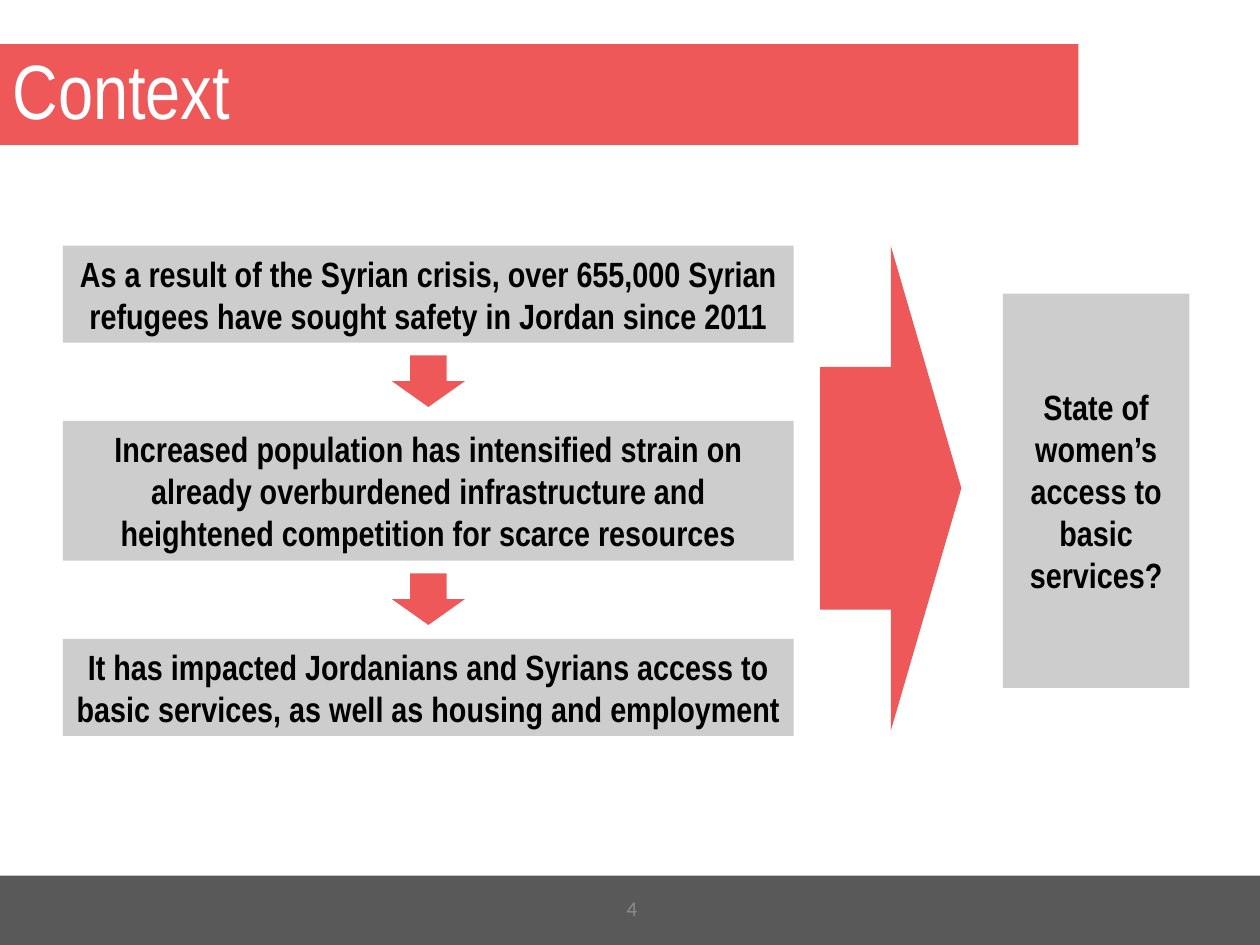
from dataclasses import dataclass

from pptx import Presentation
from pptx.dml.color import RGBColor
from pptx.enum.shapes import MSO_SHAPE as Shape
from pptx.enum.text import MSO_ANCHOR as Anchor, PP_ALIGN as Align
from pptx.util import Emu, Pt

EMU_PER_PX = 9144  # 100 px to the inch
COLORS = {
    "coral": "EE5859",
    "panel": "CDCDCD",
    "footer": "595959",
    "number": "8C8C8C",
    "white": "FFFFFF",
    "black": "000000",
}
NARROW = "Arial Narrow"


@dataclass(frozen=True)
class Box:
    left: int
    top: int
    width: int
    height: int

    def emu(self) -> tuple[Emu, ...]:
        return tuple(Emu(px * EMU_PER_PX)
                     for px in (self.left, self.top, self.width, self.height))


@dataclass(frozen=True)
class Statement:
    box: Box
    text: str


STATEMENTS = [
    Statement(Box(50, 195, 580, 77),
              "As a result of the Syrian crisis, over 655,000 Syrian "
              "refugees have sought safety in Jordan since 2011"),
    Statement(Box(50, 334, 580, 111),
              "Increased population has intensified strain on already overburdened "
              "infrastructure and heightened competition for scarce resources"),
    Statement(Box(50, 507, 580, 77),
              "It has impacted Jordanians and Syrians access to basic services, "
              "as well as housing and employment"),
]
QUESTION = Statement(Box(796, 233, 148, 313),
                     "State of women’s access to basic services?")
STEP_ARROW_WIDTH, STEP_ARROW_HEIGHT = 58, 41


def color(name: str) -> RGBColor:
    return RGBColor.from_string(COLORS[name])


def fill_shape(shape, fill: str) -> None:
    shape.fill.solid()
    shape.fill.fore_color.rgb = color(fill)


def add_flat(slide, kind: Shape, box: Box, fill: str):
    """Add a preset shape with no outline and no shadow."""
    shape = slide.shapes.add_shape(kind, *box.emu())
    fill_shape(shape, fill)
    shape.line.fill.background()
    shape.shadow.inherit = False
    return shape


def write(shape, text: str, font_name: str, size: int, ink: str,
          align: Align = Align.CENTER, bold: bool = False) -> None:
    frame = shape.text_frame
    frame.text = text
    frame.word_wrap = True
    frame.vertical_anchor = Anchor.MIDDLE
    paragraph = frame.paragraphs[0]
    paragraph.alignment = align
    font = paragraph.font
    font.name, font.size, font.bold = font_name, Pt(size), bold
    font.color.rgb = color(ink)


def add_statement(slide, statement: Statement) -> None:
    panel = add_flat(slide, Shape.RECTANGLE, statement.box, "panel")
    write(panel, statement.text, NARROW, 20, "black", bold=True)


def add_step_arrow(slide, above: Box, below: Box) -> None:
    """Centre a down arrow in the gap between two panels."""
    gap_top = above.top + above.height
    left = above.left + (above.width - STEP_ARROW_WIDTH) // 2
    top = (gap_top + below.top - STEP_ARROW_HEIGHT) // 2
    add_flat(slide, Shape.DOWN_ARROW,
             Box(left, top, STEP_ARROW_WIDTH, STEP_ARROW_HEIGHT), "coral")


def add_title(slide, box: Box, text: str) -> None:
    title = slide.shapes.title
    title.left, title.top, title.width, title.height = box.emu()
    fill_shape(title, "coral")
    write(title, text, NARROW, 44, "white", align=Align.LEFT)
    title.text_frame.paragraphs[0].line_spacing = 0.9


def main() -> None:
    deck = Presentation()
    deck.slide_width = Emu(1000 * EMU_PER_PX)
    deck.slide_height = Emu(750 * EMU_PER_PX)
    slide = deck.slides.add_slide(deck.slide_layouts[5])

    add_title(slide, Box(0, 35, 856, 80), "Context")
    add_flat(slide, Shape.RECTANGLE, Box(0, 695, 1000, 55), "footer")

    for statement in STATEMENTS:
        add_statement(slide, statement)
    for above, below in zip(STATEMENTS, STATEMENTS[1:]):
        add_step_arrow(slide, above.box, below.box)
    add_statement(slide, QUESTION)
    add_flat(slide, Shape.RIGHT_ARROW, Box(651, 195, 112, 385), "coral")

    page_number = slide.shapes.add_textbox(*Box(389, 701, 225, 40).emu())
    write(page_number, "4", "Calibri", 12, "number")

    deck.save("out.pptx")


if __name__ == "__main__":
    main()
